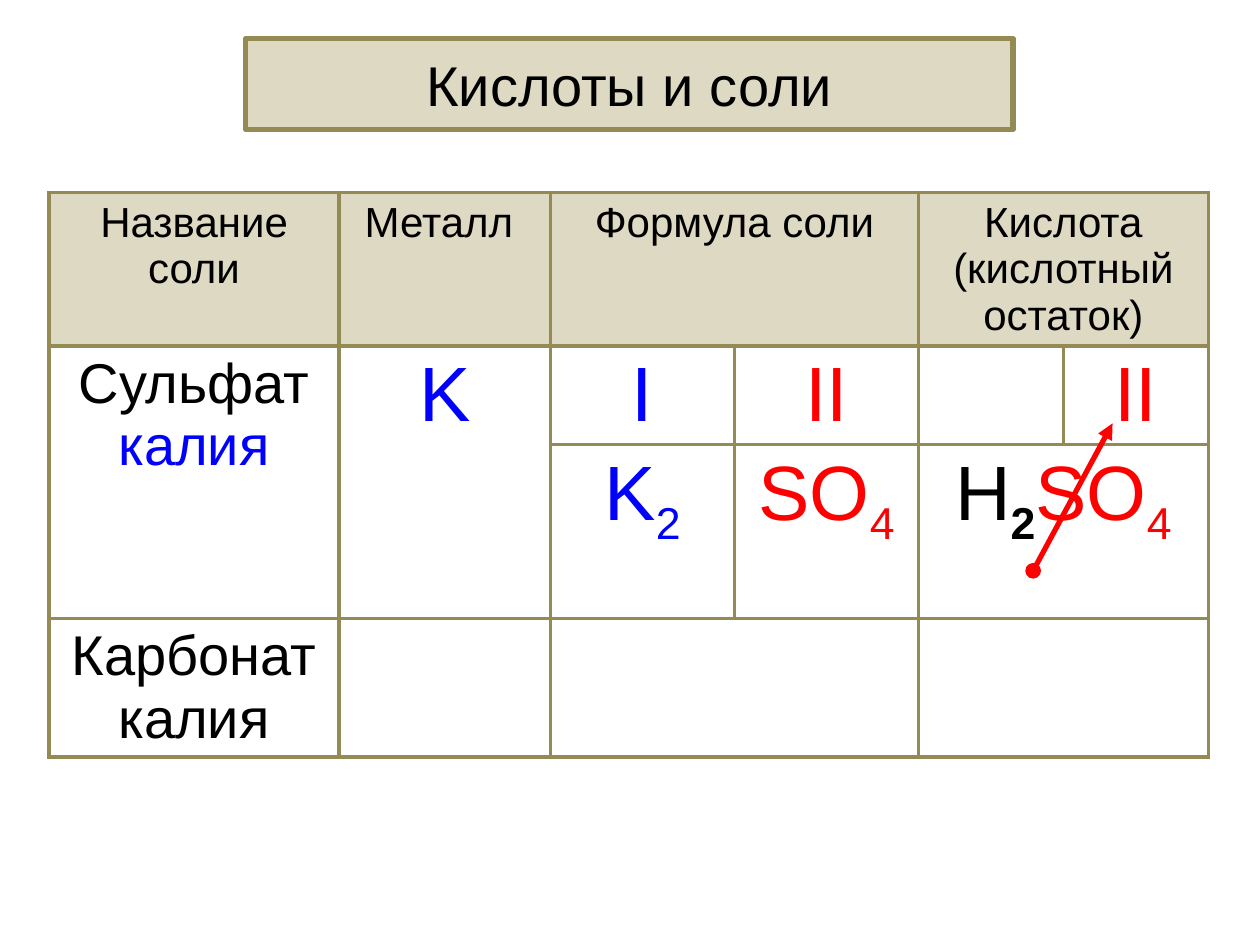
"""Build a slide on acids and salts with a table of salt formulas."""
import lxml.etree
import pptx
import pptx.dml.color
import pptx.enum.shapes
import pptx.enum.text
import pptx.oxml.ns
import pptx.util

THEME = {
    "font": "Arial",
    "ink": "000000",
    "metal": "0000FF",
    "residue": "FF0000",
    "panel": "DDD9C3",
    "edge": "948A54",
    "header": 24,
    "body": 32,
    "formula": 44,
    "thick": 3,
    "border": 2.25,
    "subscript": "-25000",
}

SLIDE = (10, 7.5)
HEADING = "Кислоты и соли"
HEADING_BOX = (0.195, 0.041, 0.609, 0.096)
TABLE_CORNER = (0.039, 0.204)
COLUMNS = (2.3, 1.68, 1.46, 1.46, 1.15, 1.15)
ROWS = (1.21, 0.78, 1.38, 1.1)
HEADER_ROW = 0
MERGES = [
    ((0, 2), (0, 3)),
    ((0, 4), (0, 5)),
    ((1, 0), (2, 0)),
    ((1, 1), (2, 1)),
    ((2, 4), (2, 5)),
    ((3, 2), (3, 3)),
    ((3, 4), (3, 5)),
]
SULFATE = [("SO", "residue"), ("4", "residue", "sub")]
CONTENT = {
    (0, 0): ("header", [("Название соли", "ink")]),
    (0, 1): ("header", [("Металл ", "ink")]),
    (0, 2): ("header", [("Формула соли", "ink")]),
    (0, 4): ("header", [("Кислота (кислотный остаток)", "ink")]),
    (1, 0): ("body", [("Сульфат ", "ink"), ("калия", "metal")]),
    (1, 1): ("formula", [("K", "metal")]),
    (1, 2): ("formula", [("I", "metal")]),
    (1, 3): ("formula", [("II", "residue")]),
    (1, 5): ("formula", [("II", "residue")]),
    (2, 2): ("formula", [("K", "metal"), ("2", "metal", "sub")]),
    (2, 3): ("formula", SULFATE),
    (2, 4): ("formula", [("H", "ink"), ("2", "ink", "sub", "bold")] + SULFATE),
    (3, 0): ("body", [("Карбонат калия", "ink")]),
}
VALENCE_ARROW = ((0.82, 0.604), (0.883, 0.448))
ARROW_ENDS = {"headEnd": "oval", "tailEnd": "triangle"}


def color(role):
    return pptx.dml.color.RGBColor.from_string(THEME[role])


def across(share):
    return pptx.util.Inches(share * SLIDE[0])


def down(share):
    return pptx.util.Inches(share * SLIDE[1])


def child(parent, tag, **values):
    return lxml.etree.SubElement(parent, pptx.oxml.ns.qn(tag), **values)


def write(frame, size, pieces):
    paragraph = frame.paragraphs[0]
    paragraph.alignment = pptx.enum.text.PP_ALIGN.CENTER
    for words, role, *marks in pieces:
        run = paragraph.add_run()
        run.text = words
        formats = {
            "name": THEME["font"],
            "size": pptx.util.Pt(THEME[size]),
            "bold": "bold" in marks,
        }
        for key, value in formats.items():
            setattr(run.font, key, value)
        run.font.color.rgb = color(role)
        if "sub" in marks:
            run._r.get_or_add_rPr().set("baseline", THEME["subscript"])


def fill_panel(fill):
    fill.solid()
    fill.fore_color.rgb = color("panel")


def stroke(line, role):
    line.color.rgb = color(role)
    line.width = pptx.util.Pt(THEME["thick"])


def outline(cell):
    properties = cell._tc.get_or_add_tcPr()
    width = str(pptx.util.Pt(THEME["border"]))
    for position, side in enumerate(("a:lnL", "a:lnR", "a:lnT", "a:lnB")):
        border = child(properties, side, w=width)
        child(child(border, "a:solidFill"), "a:srgbClr", val=THEME["edge"])
        properties.insert(position, border)


def add_heading(slide):
    left, top, width, height = HEADING_BOX
    heading = slide.shapes.add_shape(
        pptx.enum.shapes.MSO_SHAPE.ROUNDED_RECTANGLE,
        across(left), down(top), across(width), down(height))
    heading.adjustments[0] = 0
    heading.shadow.inherit = False
    fill_panel(heading.fill)
    stroke(heading.line, "edge")
    heading.text_frame.vertical_anchor = pptx.enum.text.MSO_ANCHOR.MIDDLE
    write(heading.text_frame, "body", [(HEADING, "ink")])


def add_salts(slide):
    left, top = TABLE_CORNER
    salts = slide.shapes.add_table(
        len(ROWS), len(COLUMNS), across(left), down(top),
        pptx.util.Inches(sum(COLUMNS)), pptx.util.Inches(sum(ROWS))).table
    for flag, value in {"first_row": False, "horz_banding": False}.items():
        setattr(salts, flag, value)
    for column, width in zip(salts.columns, COLUMNS):
        column.width = pptx.util.Inches(width)
    for row, height in zip(salts.rows, ROWS):
        row.height = pptx.util.Inches(height)
    for first, last in MERGES:
        salts.cell(*first).merge(salts.cell(*last))
    for row in range(len(ROWS)):
        for column in range(len(COLUMNS)):
            cell = salts.cell(row, column)
            if row == HEADER_ROW:
                fill_panel(cell.fill)
            else:
                cell.fill.background()
            if not cell.is_spanned:
                outline(cell)
    for place, (size, pieces) in CONTENT.items():
        write(salts.cell(*place).text_frame, size, pieces)


def add_valence_arrow(slide):
    (start_x, start_y), (end_x, end_y) = VALENCE_ARROW
    arrow = slide.shapes.add_connector(
        pptx.enum.shapes.MSO_CONNECTOR.STRAIGHT,
        across(start_x), down(start_y), across(end_x), down(end_y))
    stroke(arrow.line, "residue")
    for end, kind in ARROW_ENDS.items():
        child(arrow.line._get_or_add_ln(), f"a:{end}", type=kind)
    child(arrow._element.spPr, "a:effectLst")


def main():
    deck = pptx.Presentation()
    deck.slide_width, deck.slide_height = map(pptx.util.Inches, SLIDE)
    slide = deck.slides.add_slide(deck.slide_layouts[6])
    add_heading(slide)
    add_salts(slide)
    add_valence_arrow(slide)
    deck.save("out.pptx")


if __name__ == "__main__":
    main()
